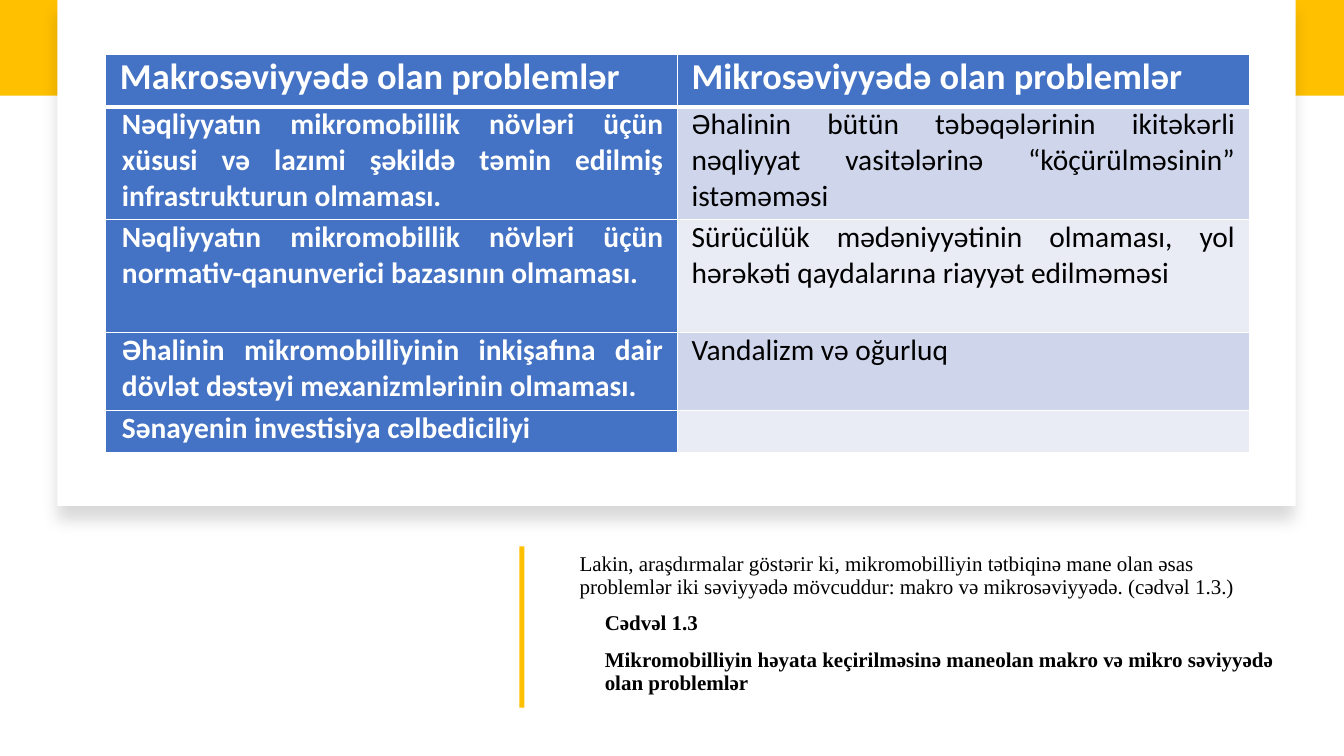
from lxml.etree import SubElement
from pptx import Presentation
from pptx.dml.color import RGBColor
from pptx.enum.shapes import MSO_SHAPE as Shape
from pptx.enum.text import MSO_ANCHOR as Anchor, PP_ALIGN as Align
from pptx.oxml import parse_xml
from pptx.oxml.ns import nsdecls, qn
from pptx.util import Inches, Pt

GOLD = RGBColor(0xFF, 0xC0, 0x00)
WHITE = RGBColor(0xFF, 0xFF, 0xFF)
BLACK = RGBColor(0, 0, 0)
BLUE = RGBColor(0x44, 0x72, 0xC4)
BANDS = [RGBColor(0xE9, 0xEB, 0xF5), RGBColor(0xCF, 0xD5, 0xEA)]

ROWS = [
    ("Makrosəviyyədə olan problemlər", "Mikrosəviyyədə olan problemlər"),
    ("Nəqliyyatın mikromobillik növləri üçün xüsusi və lazımi şəkildə təmin edilmiş infrastrukturun olmaması.",
     "Əhalinin bütün təbəqələrinin ikitəkərli nəqliyyat vasitələrinə “köçürülməsinin” istəməməsi"),
    ("Nəqliyyatın mikromobillik növləri üçün normativ-qanunverici bazasının olmaması.",
     "Sürücülük mədəniyyətinin olmaması, yol hərəkəti qaydalarına riayyət edilməməsi"),
    ("Əhalinin mikromobilliyinin inkişafına dair dövlət dəstəyi mexanizmlərinin olmaması.",
     "Vandalizm və oğurluq"),
    ("Sənayenin investisiya cəlbediciliyi", ""),
]
HEIGHTS = [0.52, 1.12, 1.12, 0.77, 0.42]
NOTES = [
    ("Lakin, araşdırmalar göstərir ki, mikromobilliyin tətbiqinə mane olan əsas problemlər iki səviyyədə mövcuddur: makro və mikrosəviyyədə. (cədvəl 1.3.)", False, 0),
    ("Cədvəl 1.3", True, 0.25),
    ("Mikromobilliyin həyata keçirilməsinə maneolan makro və mikro səviyyədə olan problemlər", True, 0.25),
]

deck = Presentation()
deck.slide_width, deck.slide_height = Inches(13.33), Inches(7.5)
slide = deck.slides.add_slide(deck.slide_layouts[6])


def write(para, text, font="Calibri", size=21, color=BLACK, bold=False,
          align=Align.LEFT, indent=0, before=0, lines=1.0):
    para.alignment = align
    para.space_before = Pt(before)
    para.line_spacing = lines
    if indent:
        props = para._p.get_or_add_pPr()
        props.set("marL", str(Inches(indent)))
        props.set("indent", "0")
    run = para.add_run()
    run.text = text
    run.font.name, run.font.size = font, Pt(size)
    run.font.bold, run.font.color.rgb = bold, color


def block(left, top, width, height, color):
    rect = slide.shapes.add_shape(Shape.RECTANGLE, Inches(left), Inches(top),
                                  Inches(width), Inches(height))
    rect.shadow.inherit = False
    rect.fill.solid()
    rect.fill.fore_color.rgb = color
    rect.line.fill.background()
    return rect


def edge(cell, heavy):
    props = cell._tc.get_or_add_tcPr()
    for spot, side in enumerate("LRTB"):
        width = Pt(3 if side == heavy else 1)
        props.insert(spot, parse_xml(
            f'<a:ln{side} {nsdecls("a")} w="{width}"><a:solidFill>'
            f'<a:srgbClr val="{WHITE}"/></a:solidFill></a:ln{side}>'))


block(0, 0, 13.33, 0.95, GOLD)
card = block(0.57, 0, 12.28, 5.02, WHITE)
glow = SubElement(card._element.spPr.find(qn("a:effectLst")), qn("a:outerShdw"),
                  blurRad=str(Pt(11)), dist=str(Pt(10)), dir="5400000",
                  algn="t", rotWithShape="0")
tint = SubElement(glow, qn("a:srgbClr"), val=str(BLACK))
SubElement(tint, qn("a:alpha"), val="15000")
block(5.15, 5.42, 0.05, 1.6, GOLD)

box = slide.shapes.add_textbox(Inches(5.65), Inches(5.34), Inches(7.2), Inches(1.7))
frame = box.text_frame
frame.word_wrap = True
frame.vertical_anchor = Anchor.MIDDLE
for i, (text, bold, indent) in enumerate(NOTES):
    para = frame.add_paragraph() if i else frame.paragraphs[0]
    write(para, text, font="Times New Roman", size=15, bold=bold,
          indent=indent, before=10, lines=0.9)

grid = slide.shapes.add_table(len(ROWS), 2, Inches(1.05), Inches(0.54),
                              Inches(11.34), Inches(sum(HEIGHTS))).table
grid.horz_banding = False
for col in grid.columns:
    col.width = Inches(5.67)
for r, (row, height) in enumerate(zip(ROWS, HEIGHTS)):
    grid.rows[r].height = Inches(height)
    for c, text in enumerate(row):
        cell = grid.cell(r, c)
        head = r == 0
        dark = head or c == 0
        cell.margin_left = cell.margin_right = Inches(0.14)
        cell.margin_top = cell.margin_bottom = 0
        cell.fill.solid()
        cell.fill.fore_color.rgb = BLUE if dark else BANDS[r % 2]
        edge(cell, "B" if head else "T" if r == 1 else "")
        if text:
            write(cell.text_frame.paragraphs[0], text, size=26 if head else 21,
                  color=WHITE if dark else BLACK, bold=dark, align=Align.JUSTIFY,
                  indent=0.02 if dark and not head else 0)

deck.save("out.pptx")
